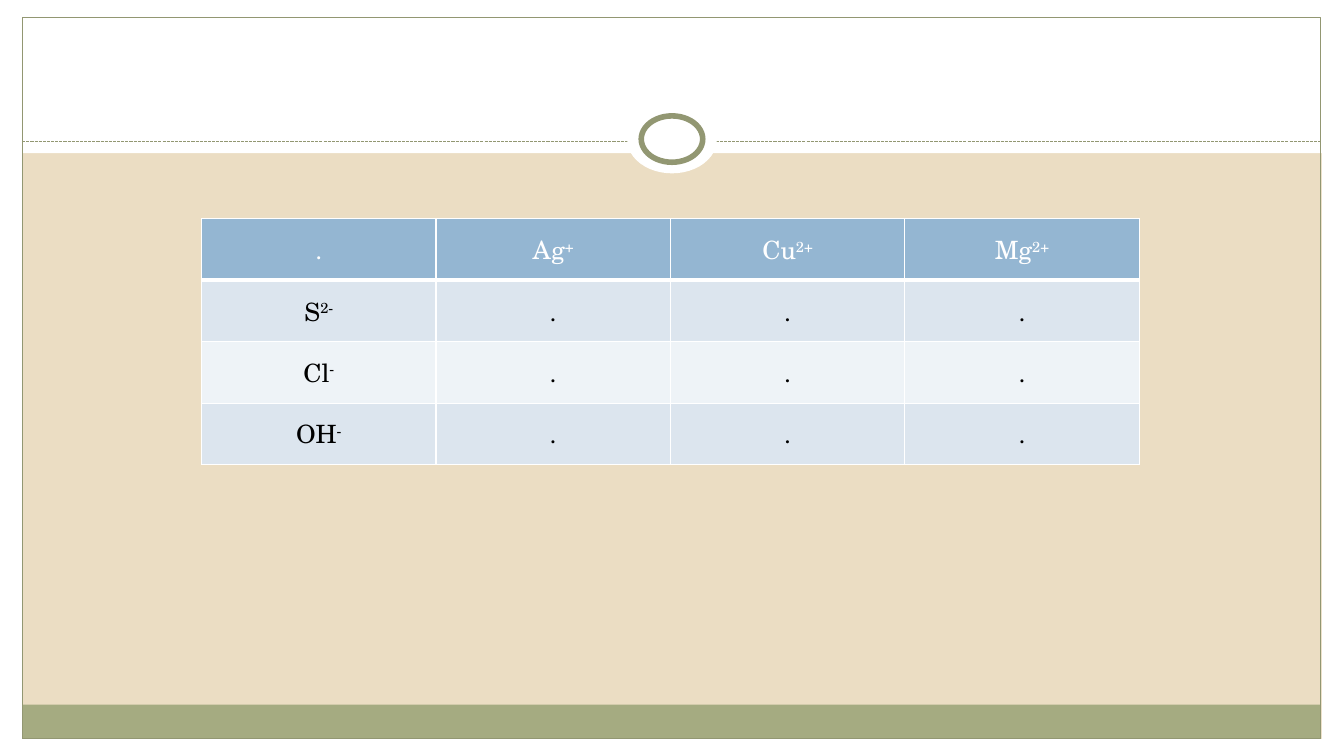
from lxml.etree import SubElement
from pptx import Presentation
from pptx.dml.color import RGBColor
from pptx.enum.dml import MSO_LINE
from pptx.enum.shapes import MSO_CONNECTOR, MSO_SHAPE
from pptx.enum.text import MSO_ANCHOR, PP_ALIGN
from pptx.oxml import parse_xml
from pptx.oxml.ns import nsdecls, qn
from pptx.util import Inches, Pt


def color(code):
    return RGBColor.from_string(code)


deck = Presentation()
deck.slide_width, deck.slide_height = Inches(13.33), Inches(7.5)
slide = deck.slides.add_slide(deck.slide_layouts[6])
slide.background.fill.solid()
slide.background.fill.fore_color.rgb = color("EBDDC3")


def block(kind, box, fill=None, width=None):
    shape = slide.shapes.add_shape(kind, *[Inches(n) for n in box])
    shape.shadow.inherit = False
    if fill:
        shape.fill.solid()
        shape.fill.fore_color.rgb = color(fill)
    else:
        shape.fill.background()
    if width:
        shape.line.color.rgb = color("929772")
        shape.line.width = Pt(width)
    else:
        shape.line.fill.background()


bands = [
    ((0, 7.33, 13.33, 0.17), "FFFFFF"),
    ((0, 0, 13.33, 1.52), "FFFFFF"),
    ((0, 0, 0.22, 7.5), "FFFFFF"),
    ((13.11, 0, 0.22, 7.5), "FFFFFF"),
    ((0.22, 6.99, 12.88, 0.34), "A5AB81"),
]
for box, fill in bands:
    block(MSO_SHAPE.RECTANGLE, box, fill)
block(MSO_SHAPE.RECTANGLE, (0.22, 0.17, 12.88, 7.16), width=0.75)

rule = slide.shapes.add_connector(
    MSO_CONNECTOR.STRAIGHT, Inches(0.22), Inches(1.4), Inches(13.1), Inches(1.4))
rule.line.color.rgb = color("929772")
rule.line.width = Pt(0.75)
rule.line.dash_style = MSO_LINE.SQUARE_DOT
SubElement(rule.element.spPr, qn("a:effectLst"))

block(MSO_SHAPE.OVAL, (6.22, 1.05, 0.89, 0.67), "FFFFFF")
block(MSO_SHAPE.OVAL, (6.36, 1.15, 0.61, 0.46), "FFFFFF", 4)

rows = [
    [".", "Ag^+", "Cu^2+", "Mg^2+"],
    ["S^2-", ".", ".", "."],
    ["Cl^-", ".", ".", "."],
    ["OH^-", ".", ".", "."],
]
fills = ["94B6D2", "DCE5EE", "EEF3F7", "DCE5EE"]
style = {"size": Pt(18), "name": "TeX Gyre Schola", "bold": False}
sides = ["margin_left", "margin_top", "margin_right", "margin_bottom"]
table = slide.shapes.add_table(
    4, 4, Inches(2), Inches(2.17), Inches(9.3), Inches(2.44)).table

for r, row in enumerate(rows):
    for c, text in enumerate(row):
        cell = table.cell(r, c)
        cell.vertical_anchor = MSO_ANCHOR.MIDDLE
        for side in sides:
            setattr(cell, side, Inches(0.1))
        props = cell._tc.get_or_add_tcPr()
        for edge in "LRTB":
            width = Pt(3 if r == 0 and edge == "B" else 1)
            props.append(parse_xml(
                f'<a:ln{edge} {nsdecls("a")} w="{width}"><a:solidFill>'
                f'<a:srgbClr val="FFFFFF"/></a:solidFill></a:ln{edge}>'))
        cell.fill.solid()
        cell.fill.fore_color.rgb = color(fills[r])
        para = cell.text_frame.paragraphs[0]
        para.alignment = PP_ALIGN.CENTER
        for n, part in enumerate(text.split("^")):
            run = para.add_run()
            run.text = part
            for key, value in style.items():
                setattr(run.font, key, value)
            run.font.color.rgb = color("000000" if r else "FFFFFF")
            if n:
                run.font._element.set("baseline", "30000")

deck.save("out.pptx")
